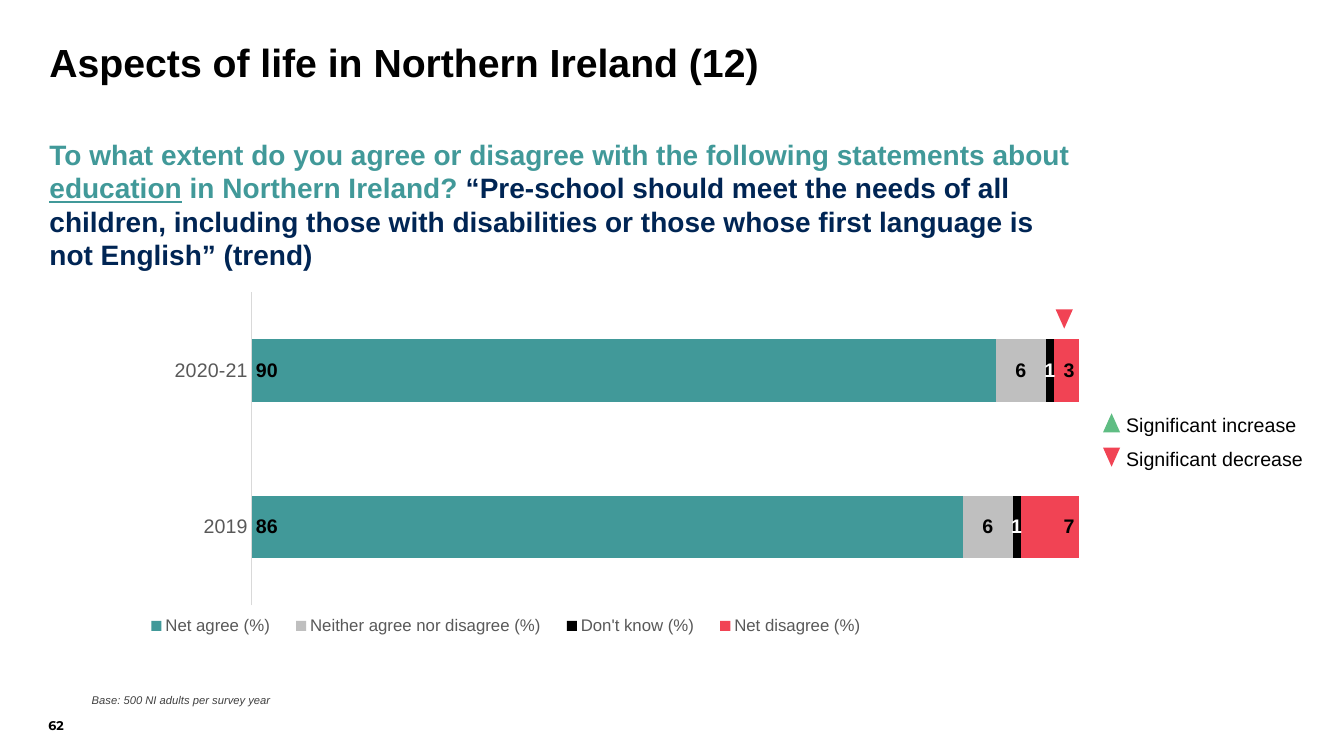
from lxml import etree
from pptx import Presentation
from pptx.chart.data import CategoryChartData
from pptx.dml.color import RGBColor
from pptx.enum.chart import XL_CHART_TYPE as ChartType
from pptx.enum.chart import XL_LABEL_POSITION as LabelPos
from pptx.enum.chart import XL_LEGEND_POSITION as LegendPos
from pptx.enum.chart import XL_TICK_MARK as TickMark
from pptx.enum.shapes import MSO_SHAPE as Shape
from pptx.enum.text import MSO_ANCHOR as Anchor
from pptx.enum.text import MSO_AUTO_SIZE as AutoSize
from pptx.enum.text import PP_ALIGN as Align
from pptx.oxml.ns import qn
from pptx.util import Inches, Pt

TEAL, NAVY, GREY, RED, GREEN = "419999", "002554", "BFBFBF", "F14354", "5FBD83"
BLACK, WHITE, AXIS_TEXT, AXIS_LINE = "000000", "FFFFFF", "595959", "D9D9D9"

SURVEY_YEARS = ["2019", "2020-21"]
ANSWERS = [
    ("Net agree (%)", (86, 90), TEAL, BLACK, LabelPos.INSIDE_BASE),
    ("Neither agree nor disagree (%)", (6, 6), GREY, BLACK, LabelPos.CENTER),
    ("Don't know (%)", (1, 1), BLACK, WHITE, LabelPos.CENTER),
    ("Net disagree (%)", (7, 3), RED, BLACK, LabelPos.INSIDE_END),
]


def rgb(hex_colour):
    return RGBColor.from_string(hex_colour)


def style_font(font, size, colour, bold=False, italic=False, face="Arial"):
    font.name = face
    font.size = Pt(size)
    font.bold = bold
    font.italic = italic
    font.color.rgb = rgb(colour)


def write(frame, *parts, size, colour=BLACK, bold=False, italic=False,
          face="Arial", anchor=Anchor.TOP, spacing=None, after=0, wrap=True,
          inset=(0, 0)):
    frame.auto_size = AutoSize.NONE
    frame.word_wrap = wrap
    frame.vertical_anchor = anchor
    frame.margin_left = frame.margin_right = Inches(inset[0])
    frame.margin_top = frame.margin_bottom = Inches(inset[1])
    paragraph = frame.paragraphs[0]
    paragraph.alignment = Align.LEFT
    paragraph.space_before = Pt(0)
    paragraph.space_after = Pt(after)
    if spacing:
        paragraph.line_spacing = spacing
    for text, *changes in parts:
        run = paragraph.add_run()
        run.text = text
        style_font(run.font, size, changes[0] if changes else colour,
                   bold, italic, face)
        if len(changes) > 1:
            run.font.underline = changes[1]


def add_text(slide, left, top, width, height, *parts, **style):
    box = slide.shapes.add_textbox(Inches(left), Inches(top),
                                   Inches(width), Inches(height))
    write(box.text_frame, *parts, **style)


def add_title(slide, text):
    title = slide.shapes.title
    title.left, title.top = Inches(0.49), Inches(0.43)
    title.width, title.height = Inches(10.22), Inches(0.85)
    write(title.text_frame, (text,), size=28, bold=True, spacing=0.9)


def add_marker(slide, left, top, increase):
    marker = slide.shapes.add_shape(Shape.ISOSCELES_TRIANGLE, Inches(left),
                                    Inches(top), Inches(0.17), Inches(0.19))
    marker.shadow.inherit = False
    marker.fill.solid()
    marker.fill.fore_color.rgb = rgb(GREEN if increase else RED)
    marker.line.fill.background()
    marker.rotation = 0 if increase else 180


def place_part(parent, successors, **layout):
    for old in parent.findall(qn("c:layout")):
        parent.remove(old)
    element = etree.Element(qn("c:layout"))
    manual = etree.SubElement(element, qn("c:manualLayout"))
    for tag, value in layout.items():
        etree.SubElement(manual, qn("c:" + tag)).set("val", str(value))
    following = [child for child in parent
                 if child.tag in [qn(tag) for tag in successors]]
    following[0].addprevious(element)


def add_answer_chart(slide):
    answer_data = CategoryChartData(number_format="0")
    answer_data.categories = SURVEY_YEARS
    for name, shares, *_ in ANSWERS:
        answer_data.add_series(name, shares)
    chart = slide.shapes.add_chart(
        ChartType.BAR_STACKED_100, Inches(0.37), Inches(2.75),
        Inches(10.33), Inches(3.76), answer_data).chart
    style_font(chart.font, 10, BLACK)
    chart.has_title = False

    bars = chart.plots[0]
    bars.gap_width, bars.overlap = 150, 100
    bars.vary_by_categories = False
    for series, (_, _, fill, label_colour, position) in zip(bars.series, ANSWERS):
        series.format.fill.solid()
        series.format.fill.fore_color.rgb = rgb(fill)
        labels = series.data_labels
        labels.show_value = True
        labels.number_format, labels.number_format_is_linked = "0", False
        labels.position = position
        style_font(labels.font, 14, label_colour, bold=True)

    years = chart.category_axis
    years.major_tick_mark = years.minor_tick_mark = TickMark.NONE
    years.format.line.color.rgb = rgb(AXIS_LINE)
    years.format.line.width = Pt(0.75)
    style_font(years.tick_labels.font, 14, AXIS_TEXT)
    chart.value_axis.visible = False
    chart.value_axis.has_major_gridlines = False

    chart.has_legend = True
    legend = chart.legend
    legend.position = LegendPos.BOTTOM
    legend.include_in_layout = False
    style_font(legend.font, 12, AXIS_TEXT)
    plot_area = bars._element.getparent()
    place_part(plot_area, ["c:barChart"], layoutTarget="inner", xMode="edge",
               yMode="edge", x=0.206, y=0.04, w=0.794, h=0.826)
    place_part(legend._element, ["c:overlay", "c:spPr", "c:txPr"],
               xMode="edge", yMode="edge", x=0.09, y=0.88, w=0.72, h=0.08)


def add_significance_key(slide):
    for row, change in enumerate(("increase", "decrease")):
        top = 4.02 + row * 0.34
        add_marker(slide, 10.94, top + 0.08, change == "increase")
        add_text(slide, 11.07, top, 1.99, 0.3, (f"Significant {change}",),
                 size=14, spacing=1.1, after=6, inset=(0.1, 0.05))


def main():
    deck = Presentation()
    deck.slide_width, deck.slide_height = Inches(13.33), Inches(7.5)
    slide = deck.slides.add_slide(deck.slide_layouts.get_by_name("Title Only"))
    add_title(slide, "Aspects of life in Northern Ireland (12)")
    add_text(slide, 0.49, 1.36, 10.22, 1.35,
             ("To what extent do you agree or disagree with the following "
              "statements about ",),
             ("education", TEAL, True),
             (" in Northern Ireland? ",),
             ("“Pre-school should meet the needs of all children, including "
              "those with disabilities or those whose first language is not "
              "English” (trend)", NAVY),
             size=20, colour=TEAL, bold=True, after=4)
    add_answer_chart(slide)
    add_marker(slide, 10.47, 3.07, increase=False)
    add_significance_key(slide)
    add_text(slide, 0.91, 6.87, 12.33, 0.14,
             ("Base: 500 NI adults per survey year",), size=8, colour="404040",
             italic=True, anchor=Anchor.BOTTOM, spacing=1.1)
    add_text(slide, 0.48, 6.87, 0.33, 0.4, ("62",), size=9, bold=True,
             face="Montserrat", anchor=Anchor.BOTTOM, wrap=False)
    deck.save("out.pptx")


if __name__ == "__main__":
    main()
